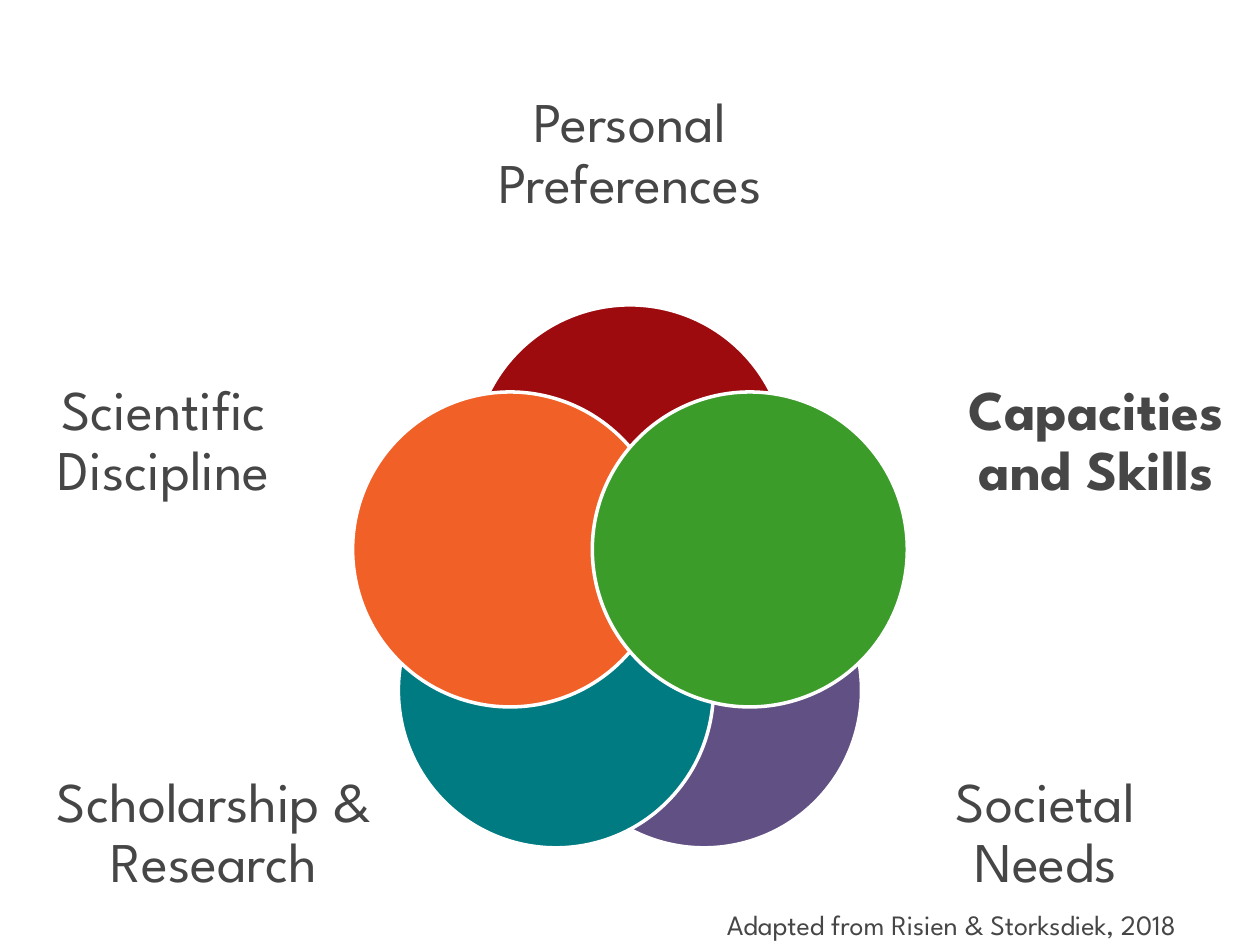
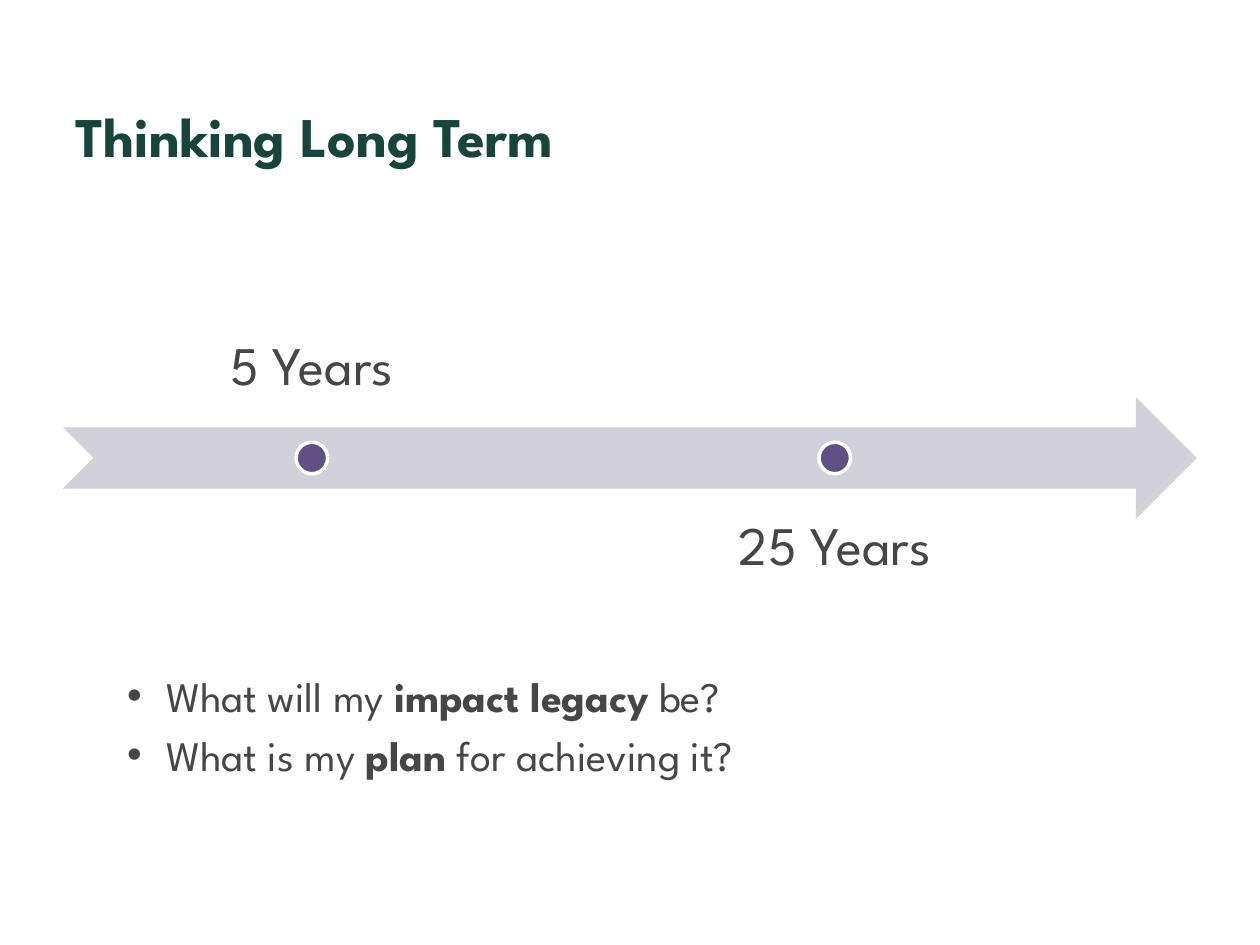
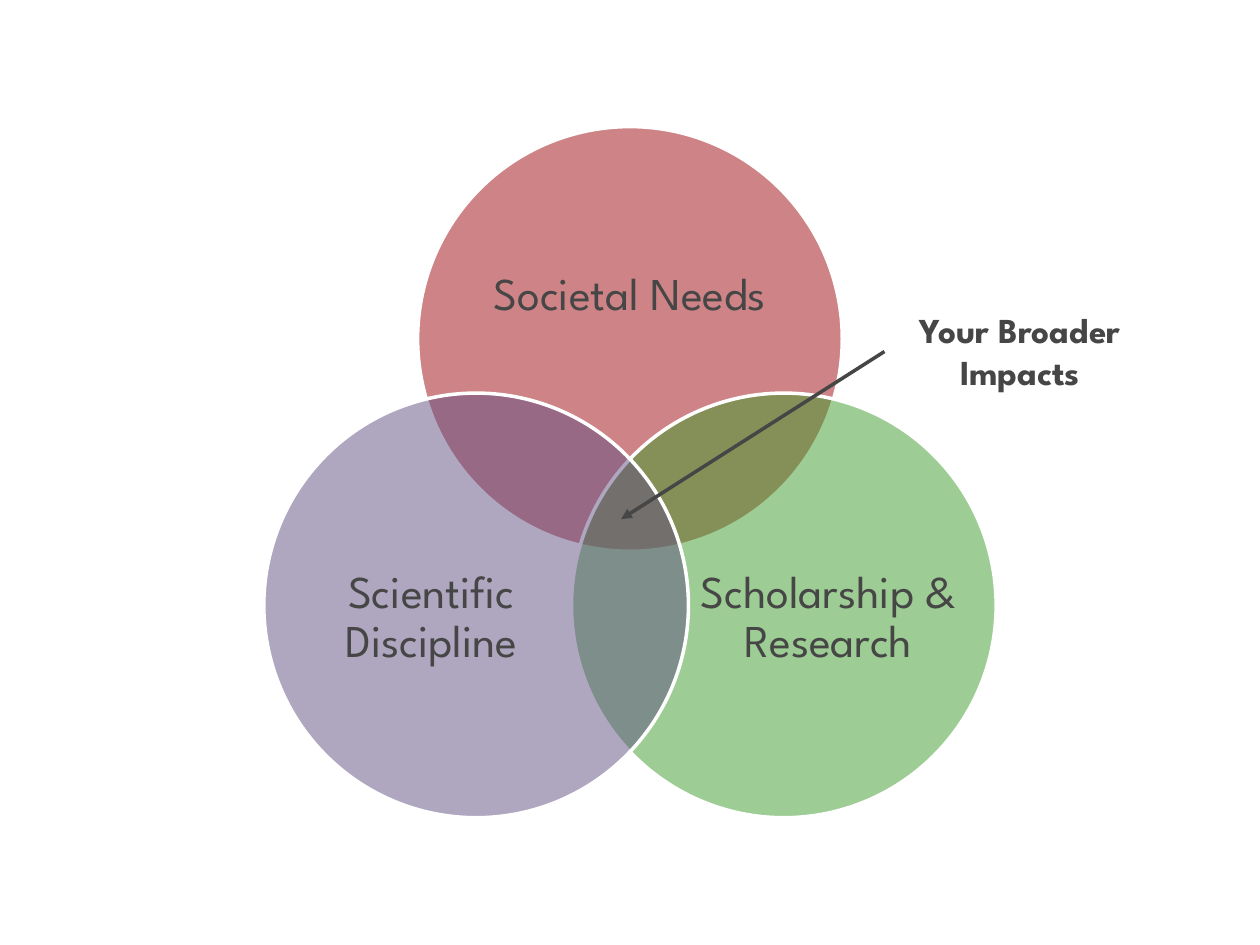
"""Build three slides on planning broader impacts."""
import math
from dataclasses import dataclass
from typing import Any

import lxml.etree
import pptx
import pptx.dml.color
import pptx.enum.shapes
import pptx.enum.text
import pptx.oxml.ns
import pptx.util

Inches = pptx.util.Inches
Pt = pptx.util.Pt
RGBColor = pptx.dml.color.RGBColor
Shape = pptx.enum.shapes.MSO_SHAPE
Anchor = pptx.enum.text.MSO_ANCHOR
Align = pptx.enum.text.PP_ALIGN
qn = pptx.oxml.ns.qn

FONT = "League Spartan"
WHITE = RGBColor(0xFF, 0xFF, 0xFF)
INK = RGBColor(0x46, 0x46, 0x46)
FOREST = RGBColor(0x18, 0x45, 0x3B)
CRIMSON = RGBColor(0x9E, 0x0B, 0x0F)
PURPLE = RGBColor(0x61, 0x50, 0x83)
TEAL = RGBColor(0x00, 0x7B, 0x82)
ORANGE = RGBColor(0xF1, 0x60, 0x27)
GREEN = RGBColor(0x3C, 0x9C, 0x2A)
PALE = RGBColor(0xD2, 0xD0, 0xD9)

FLAT = {"margin_left": 0, "margin_right": 0, "margin_top": 0, "margin_bottom": 0}
ROOMY = {side: Inches(0.24) for side in FLAT}
CENTRED = {"alignment": Align.CENTER}
TIGHT = {"alignment": Align.CENTER, "line_spacing": 0.9}


@dataclass(frozen=True)
class Area:
    """A rectangle in inches."""

    left: float
    top: float
    width: float
    height: float

    def lengths(self) -> tuple[int, ...]:
        """Return the rectangle as slide lengths."""
        return tuple(Inches(side) for side in (self.left, self.top, self.width, self.height))


@dataclass(frozen=True)
class Span:
    """A stretch of text in one weight."""

    text: str
    bold: bool = False


@dataclass(frozen=True)
class Label:
    """A block of text with one size and colour."""

    area: Area
    paragraphs: tuple[tuple[Span, ...], ...]
    size: float
    color: RGBColor = INK
    anchor: Any = Anchor.TOP
    bulleted: bool = False
    freeform: bool = False


@dataclass(frozen=True)
class Petal:
    """A circle of a ring, placed by its step clockwise from the top."""

    step: int
    color: RGBColor
    label: Label


@dataclass(frozen=True)
class Ring:
    """Equal circles spread evenly around a centre."""

    center_y: float
    radius: float
    diameter: float
    alpha: int
    petals: tuple[Petal, ...]


@dataclass(frozen=True)
class Milestone:
    """A dot on the time arrow with its label."""

    dot_left: float
    label: Label


def set_format(target: Any, values: dict[str, Any]) -> None:
    """Set attributes from a dict of format values."""
    for name, value in values.items():
        setattr(target, name, value)


def single(area: Area, text: str, size: float, bold: bool = False, **options: Any) -> Label:
    """Describe a label with a single paragraph."""
    return Label(area, ((Span(text, bold),),), size, **options)


def middle(area: Area, text: str) -> Label:
    """Describe a label inside a circle."""
    return single(area, text, 26, anchor=Anchor.MIDDLE)


def factor(area: Area, text: str, bold: bool = False) -> Label:
    """Describe a label beside a circle."""
    return single(area, text, 32, bold, anchor=Anchor.MIDDLE, freeform=True)


def add_bullet(para: Any) -> None:
    """Give a paragraph a hanging round bullet."""
    properties = para._p.get_or_add_pPr()
    indent = Inches(0.31)
    properties.set("marL", str(indent))
    properties.set("indent", str(-indent))
    lxml.etree.SubElement(properties, qn("a:buFont")).set("typeface", "Arial")
    lxml.etree.SubElement(properties, qn("a:buChar")).set("char", "•")


def add_outline(page: Any, area: Area) -> Any:
    """Add a clear rectangular freeform."""
    left, top, width, height = area.lengths()
    right, bottom = left + width, top + height
    builder = page.shapes.build_freeform(left, top)
    builder.add_line_segments([(right, top), (right, bottom), (left, bottom)], close=True)
    outline = builder.convert_to_shape()
    outline.shadow.inherit = False
    outline.fill.background()
    outline.line.fill.background()
    return outline


def draw_label(page: Any, label: Label, para_format: dict[str, Any],
               margins: dict[str, int] | None = None) -> None:
    """Draw a label as wrapping text."""
    if label.freeform:
        box = add_outline(page, label.area)
    else:
        box = page.shapes.add_textbox(*label.area.lengths())
    frame = box.text_frame
    set_format(frame, {"word_wrap": True, "vertical_anchor": label.anchor, **(margins or {})})
    for index, spans in enumerate(label.paragraphs):
        para = frame.add_paragraph() if index else frame.paragraphs[0]
        set_format(para, para_format)
        if index:
            para.space_before = Pt(label.size * 0.2)
        if label.bulleted:
            add_bullet(para)
        for span in spans:
            run = para.add_run()
            run.text = span.text
            set_format(run.font, {"name": FONT, "size": Pt(label.size), "bold": span.bold})
            run.font.color.rgb = label.color


def draw_shape(page: Any, kind: Any, area: Area, color: RGBColor,
               outlined: bool = True, alpha: int = 100) -> None:
    """Draw a filled shape, with a white outline if asked."""
    shape = page.shapes.add_shape(kind, *area.lengths())
    shape.shadow.inherit = False
    shape.fill.solid()
    shape.fill.fore_color.rgb = color
    if outlined:
        shape.line.color.rgb = WHITE
        shape.line.width = Pt(2)
    else:
        shape.line.fill.background()
    if alpha < 100:
        tint = shape._element.spPr.find(qn("a:solidFill")).find(qn("a:srgbClr"))
        lxml.etree.SubElement(tint, qn("a:alpha")).set("val", str(alpha * 1000))


def draw_ring(page: Any, ring: Ring) -> None:
    """Draw the circles of a ring with their labels."""
    for petal in ring.petals:
        angle = math.tau * petal.step / len(ring.petals)
        left = 5 + ring.radius * math.sin(angle) - ring.diameter / 2
        top = ring.center_y - ring.radius * math.cos(angle) - ring.diameter / 2
        area = Area(left, top, ring.diameter, ring.diameter)
        draw_shape(page, Shape.OVAL, area, petal.color, alpha=ring.alpha)
        draw_label(page, petal.label, TIGHT, FLAT)


def draw_pointer(page: Any, start: tuple[float, float], end: tuple[float, float]) -> None:
    """Draw a line with an arrowhead at its end."""
    pointer = page.shapes.add_connector(
        pptx.enum.shapes.MSO_CONNECTOR.STRAIGHT, *(Inches(value) for value in start + end))
    pointer.line.color.rgb = INK
    pointer.line.width = Pt(2)
    lxml.etree.SubElement(pointer.line._get_or_add_ln(), qn("a:tailEnd")).set("type", "triangle")
    lxml.etree.SubElement(pointer._element.spPr, qn("a:effectLst"))


def build_factors(page: Any) -> None:
    """Draw the five factors around their ring."""
    draw_ring(page, Ring(4.67, 1, 2.5, 100, (
        Petal(0, CRIMSON, factor(Area(3.55, 0.39, 2.9, 1.68), "Personal Preferences")),
        Petal(2, PURPLE, factor(Area(7, 5.71, 2.6, 1.82), "Societal Needs")),
        Petal(3, TEAL, factor(Area(0.4, 5.71, 2.6, 1.82), "Scholarship & Research")),
        Petal(4, ORANGE, factor(Area(0, 2.6, 2.6, 1.82), "Scientific Discipline")),
        Petal(1, GREEN, factor(Area(7.4, 2.6, 2.6, 1.82), "Capacities and Skills", True)),
    )))
    credit = single(Area(5.67, 7.15, 4.66, 0.37), "Adapted from Risien & Storksdiek, 2018", 16)
    draw_label(page, credit, {})


def build_timeline(page: Any) -> None:
    """Draw the time arrow, its milestones and the questions."""
    title = single(Area(0.5, 0.74, 9, 0.67), "Thinking Long Term", 32, True,
                   color=FOREST, anchor=Anchor.MIDDLE)
    draw_label(page, title, {})
    draw_shape(page, Shape.NOTCHED_RIGHT_ARROW, Area(0.5, 3.15, 9, 0.97), PALE, outlined=False)
    milestones = (
        Milestone(2.35, single(Area(0.5, 2.42, 3.95, 0.97), "5 Years", 31, anchor=Anchor.BOTTOM)),
        Milestone(6.5, single(Area(4.65, 3.88, 3.95, 0.97), "25 Years", 31)),
    )
    for milestone in milestones:
        draw_shape(page, Shape.OVAL, Area(milestone.dot_left, 3.51, 0.25, 0.25), PURPLE)
        draw_label(page, milestone.label, TIGHT, ROOMY)
    questions = (
        (Span("What will my "), Span("impact legacy", True), Span(" be?")),
        (Span("What is my "), Span("plan", True), Span(" for achieving it?")),
    )
    draw_label(page, Label(Area(0.91, 5.27, 8.52, 0.99), questions, 24, bulleted=True), {})


def build_overlap(page: Any) -> None:
    """Draw the three overlapping circles and point at their core."""
    draw_ring(page, Ring(4.1, 1.41, 3.37, 50, (
        Petal(0, CRIMSON, middle(Area(3.76, 1.59, 2.48, 1.52), "Societal Needs")),
        Petal(1, GREEN, middle(Area(5.56, 3.98, 2.03, 1.86), "Scholarship & Research")),
        Petal(2, PURPLE, middle(Area(2.41, 3.98, 2.03, 1.86), "Scientific Discipline")),
    )))
    draw_pointer(page, (7.02, 2.79), (4.93, 4.12))
    impacts = single(Area(7.02, 2.4, 2.15, 0.77), "Your Broader Impacts", 20, True)
    draw_label(page, impacts, CENTRED)


def main() -> None:
    """Build and save the deck."""
    deck = pptx.Presentation()
    set_format(deck, {"slide_width": Inches(10), "slide_height": Inches(7.5)})
    for build in (build_factors, build_timeline, build_overlap):
        build(deck.slides.add_slide(deck.slide_layouts[6]))
    deck.save("out.pptx")


if __name__ == "__main__":
    main()
